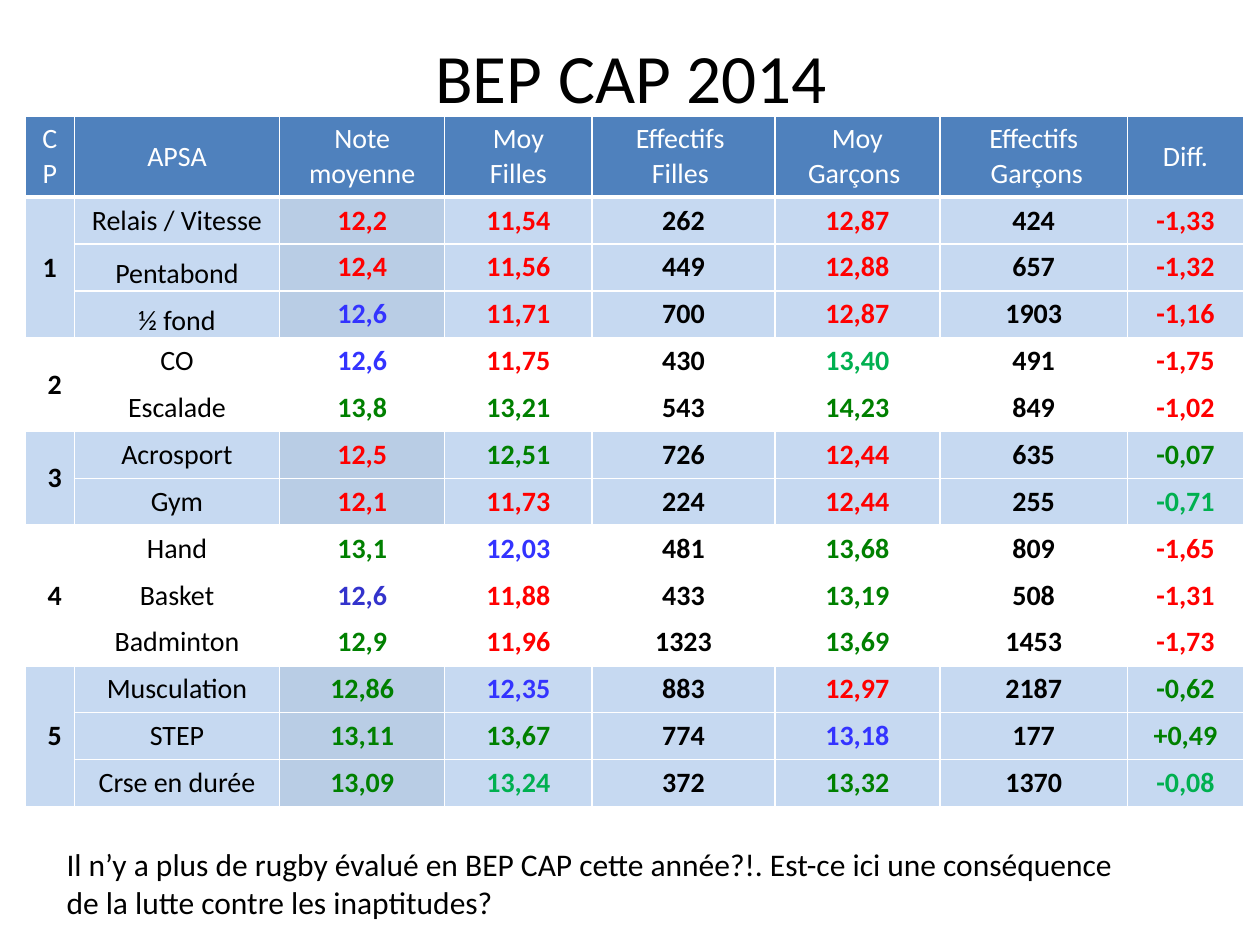
from lxml.etree import SubElement
from pptx import Presentation
from pptx.dml.color import RGBColor
from pptx.enum.text import MSO_ANCHOR, PP_ALIGN
from pptx.oxml.ns import qn
from pptx.util import Inches, Pt

# Content: each group is a CP number and its activities; each activity has
# a name, its values and one colour key per value
TITLE = "BEP CAP 2014"
NOTE = ("Il n’y a plus de rugby évalué en BEP CAP cette année?!. "
        "Est-ce ici une conséquence de la lutte contre les inaptitudes?")
HEADERS = ["CP", "APSA", "Note moyenne", "Moy\nFilles", "Effectifs \nFilles ",
           "Moy\nGarçons ", "Effectifs\n Garçons", "Diff."]
GROUPS = [
    ("1", [("Relais / Vitesse", "12,2 11,54 262 12,87 424 -1,33", "rrkrkr"),
           ("Pentabond", "12,4 11,56 449 12,88 657 -1,32", "rrkrkr"),
           ("½ fond", "12,6 11,71 700 12,87 1903 -1,16", "brkrkr")]),
    ("2", [("CO", "12,6 11,75 430 13,40 491 -1,75", "brkekr"),
           ("Escalade", "13,8 13,21 543 14,23 849 -1,02", "ggkgkr")]),
    ("3", [("Acrosport", "12,5 12,51 726 12,44 635 -0,07", "rgkrkg"),
           ("Gym", "12,1 11,73 224 12,44 255 -0,71", "rrkrke")]),
    ("4", [("Hand", "13,1 12,03 481 13,68 809 -1,65", "gbkgkr"),
           ("Basket", "12,6 11,88 433 13,19 508 -1,31", "irkgkr"),
           ("Badminton", "12,9 11,96 1323 13,69 1453 -1,73", "grkgkr")]),
    ("5", [("Musculation", "12,86 12,35 883 12,97 2187 -0,62", "gbkrkg"),
           ("STEP", "13,11 13,67 774 13,18 177 +0,49", "ggkbkg"),
           ("Crse en durée", "13,09 13,24 372 13,32 1370 -0,08", "gekgke")]),
]
COL_WIDTHS = [0.39, 1.63, 1.31, 1.17, 1.45, 1.31, 1.49, 0.92]
HEADER_H, ROW_H = 0.63, 0.37

THEME = {
    "font": "Calibri", "title": 39.6, "cell": 16, "note": 18,
    "k": "000000", "r": "FF0000", "b": "3333FF", "i": "3333CC",
    "g": "008000", "e": "00B050", "white": "FFFFFF",
    "header": "4F81BD", "band": "C6D9F1", "band_mean": "B9CDE5",
}


def color(key):
    return RGBColor.from_string(THEME[key])


def write(tf, text, size, key="k", bold=False, align=PP_ALIGN.CENTER):
    tf.text = text
    for p in tf.paragraphs:
        p.alignment = align
        for r in p.runs:
            fmt = {"name": THEME["font"], "size": Pt(THEME[size]), "bold": bold}
            for name, value in fmt.items():
                setattr(r.font, name, value)
            r.font.color.rgb = color(key)


def set_borders(cell, **widths):
    tcPr = cell._tc.get_or_add_tcPr()
    for side in ("lnL", "lnR", "lnT", "lnB"):
        ln = SubElement(tcPr, qn("a:" + side), w=str(Pt(widths.get(side, 1))))
        fill = SubElement(ln, qn("a:solidFill"))
        SubElement(fill, qn("a:srgbClr"), val=THEME["white"])


def style_cell(cell, fill, tight=False, **widths):
    set_borders(cell, **widths)
    cell.fill.solid()
    cell.fill.fore_color.rgb = color(fill)
    cell.vertical_anchor = MSO_ANCHOR.MIDDLE
    if tight:
        cell.margin_left = cell.margin_right = cell.margin_top = Inches(0.01)
        cell.margin_bottom = 0


prs = Presentation()
prs.slide_width, prs.slide_height = Inches(10), Inches(7.5)
s = prs.slides.add_slide(prs.slide_layouts[5])

# Title
title = s.shapes.title
title.left, title.top = Inches(0.51), Inches(0.21)
title.width, title.height = Inches(9), Inches(0.79)
title.text_frame.vertical_anchor = MSO_ANCHOR.MIDDLE
write(title.text_frame, TITLE, "title")

# Table grid
n_rows = 1 + sum(len(activities) for _, activities in GROUPS)
table = s.shapes.add_table(
    n_rows, len(HEADERS), Inches(0.2), Inches(0.92), Inches(sum(COL_WIDTHS)),
    Inches(HEADER_H + ROW_H * (n_rows - 1))).table
table.horz_banding = False
for col, width in zip(table.columns, COL_WIDTHS):
    col.width = Inches(width)
for i, row in enumerate(table.rows):
    row.height = Inches(ROW_H if i else HEADER_H)

# Header row
for c, text in enumerate(HEADERS):
    style_cell(table.cell(0, c), "header", lnB=3)
    write(table.cell(0, c).text_frame, text, "cell", "white")

# Groups of activities, shaded one in two
top = 1
for g, (cp, activities) in enumerate(GROUPS):
    shaded = g % 2 == 0
    for i, (name, values, keys) in enumerate(activities):
        texts = [cp if i == 0 else "", name, *values.split()]
        for c, (text, key) in enumerate(zip(texts, "kk" + keys)):
            cell = table.cell(top + i, c)
            fill = "white" if not shaded else "band_mean" if c == 2 else "band"
            style_cell(cell, fill, tight=g == 0 and c < 2,
                       lnT=3 if top + i == 1 else 1)
            if g == 0 and c == 1 and i > 0:
                cell.vertical_anchor = MSO_ANCHOR.BOTTOM
            align = PP_ALIGN.RIGHT if c == 0 and g > 0 else PP_ALIGN.CENTER
            write(cell.text_frame, text, "cell", key, c != 1, align)
    last = top + len(activities) - 1
    table.cell(top, 0).merge(table.cell(last, 0))
    top = last + 1

# Closing remark
note = s.shapes.add_textbox(Inches(0.43), Inches(6.66), Inches(8.66), Inches(0.71))
note.text_frame.word_wrap = True
write(note.text_frame, NOTE, "note", align=PP_ALIGN.LEFT)

prs.save("out.pptx")
